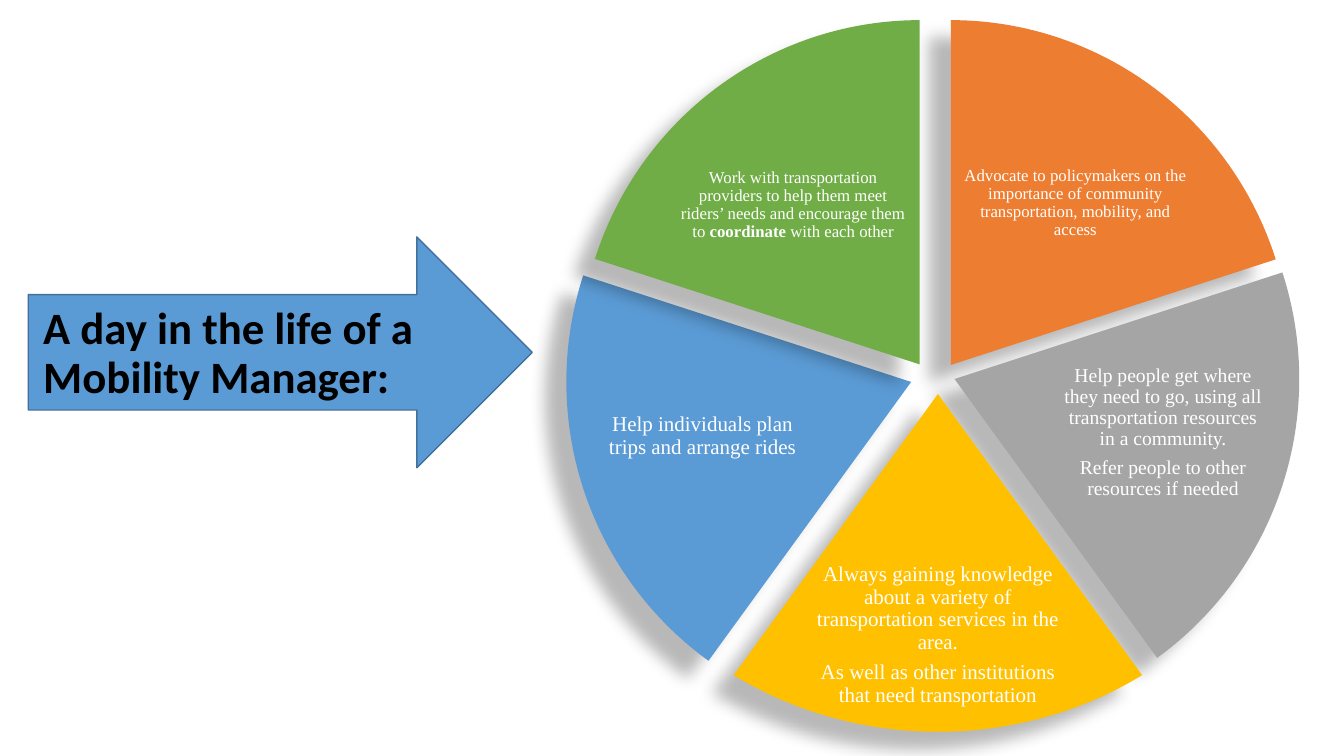
from lxml import etree
from pptx import Presentation
from pptx.dml.color import RGBColor
from pptx.enum.shapes import MSO_SHAPE
from pptx.enum.text import MSO_ANCHOR, PP_ALIGN
from pptx.oxml.ns import qn
from pptx.util import Pt

ARROW = MSO_SHAPE.RIGHT_ARROW
PIE = MSO_SHAPE.PIE
MIDDLE = MSO_ANCHOR.MIDDLE
LEFT = PP_ALIGN.LEFT
CENTER = PP_ALIGN.CENTER

THEME = {
    "blue": RGBColor.from_string("5B9BD5"),
    "outline": RGBColor.from_string("42719B"),
    "orange": RGBColor.from_string("ED7D31"),
    "gray": RGBColor.from_string("A5A5A5"),
    "gold": RGBColor.from_string("FFC000"),
    "green": RGBColor.from_string("70AD47"),
    "black": RGBColor.from_string("000000"),
    "white": RGBColor.from_string("FFFFFF"),
    "title_font": "Calibri",
    "slice_font": "Times New Roman",
    "title": 32,
    "small": 12,
    "medium": 14,
    "large": 15,
}

FULL_TURN = 216
SLICE_TURN = FULL_TURN / 5
FIRST_ANGLE = 162

deck = Presentation()
deck.slide_width, deck.slide_height = Pt(960), Pt(540)
page = deck.slides.add_slide(deck.slide_layouts[6])


def add_filled_shape(kind, bounds, color):
    shape = page.shapes.add_shape(kind, *map(Pt, bounds))
    shape.shadow.inherit = False
    shape.fill.solid()
    shape.fill.fore_color.rgb = THEME[color]
    return shape


def add_text(bounds, paragraphs, font, size, color, align, insets, gap=0):
    box = page.shapes.add_textbox(*map(Pt, bounds))
    frame = box.text_frame
    across, down = map(Pt, insets)
    frame_format = {
        "word_wrap": True, "vertical_anchor": MIDDLE,
        "margin_left": across, "margin_right": across,
        "margin_top": down, "margin_bottom": down,
    }
    for name, value in frame_format.items():
        setattr(frame, name, value)
    for index, spans in enumerate(paragraphs):
        para = frame.add_paragraph() if index else frame.paragraphs[0]
        para_format = {
            "alignment": align, "line_spacing": 0.9,
            "space_before": Pt(gap if index else 0),
        }
        for name, value in para_format.items():
            setattr(para, name, value)
        for text, bold in spans:
            span = para.add_run()
            span.text = text
            span_format = {"name": THEME[font], "size": Pt(THEME[size]), "bold": bold}
            for name, value in span_format.items():
                setattr(span.font, name, value)
            span.font.color.rgb = THEME[color]


arrow = add_filled_shape(ARROW, (20.2, 169.2, 360, 164.9), "blue")
arrow.line.color.rgb = THEME["outline"]
arrow.line.width = Pt(1)
add_text((23.8, 122.4, 309.6, 261.4),
         [[("A day in the life of a Mobility Manager:", True)]],
         "title_font", "title", "black", LEFT, (7.2, 3.6))

slices = [
    ("orange", (435.6, 14.4, 487.4, 492.5), (685.4, 87.8, 165.6, 114.5), "small", 0,
     [[("Advocate to policymakers on the importance of community "
        "transportation, mobility, and access", False)]]),
    ("gray", (435.6, 24.5, 492.5, 492.5), (757.4, 247, 146.9, 123.8), "medium", 4.9,
     [[("Help people get where they need to go, using all "
        "transportation resources in a community.", False)],
      [("Refer people to other resources if needed", False)]]),
    ("gold", (406.8, 40.3, 526.3, 482.4), (576, 401.8, 187.9, 103.7), "large", 5.2,
     [[("Always gaining knowledge about a variety of "
        "transportation services in the area.", False)],
      [("As well as other institutions that need transportation", False)]]),
    ("blue", (404.6, 26.6, 492.5, 492.5), (428.4, 249.8, 146.9, 123.8), "large", 0,
     [[("Help individuals plan trips and arrange rides", False)]]),
    ("green", (413.3, 14.4, 487.4, 491.8), (483.8, 89.3, 165.6, 114.5), "small", 0,
     [[("Work with transportation providers to help them meet "
        "riders’ needs and encourage them to ", False),
       ("coordinate", True), (" with each other", False)]]),
]

for index, (color, bounds, text_bounds, size, gap, paragraphs) in enumerate(slices):
    wedge = add_filled_shape(PIE, bounds, color)
    wedge.line.fill.background()
    start = FIRST_ANGLE + index * SLICE_TURN
    wedge.adjustments[0] = round(start % FULL_TURN, 1)
    wedge.adjustments[1] = round((start + SLICE_TURN) % FULL_TURN, 1)

    effects = wedge.element.spPr.find(qn("a:effectLst"))
    shadow = etree.SubElement(effects, qn("a:outerShdw"), {
        "blurRad": str(Pt(11.8)), "dist": str(Pt(19.7)), "dir": str(141 * 60000),
        "algn": "ctr", "rotWithShape": "0",
    })
    tint = etree.SubElement(shadow, qn("a:srgbClr"), val=str(THEME["black"]))
    etree.SubElement(tint, qn("a:alpha"), val="27000")

    add_text(text_bounds, paragraphs, "slice_font", size, "white", CENTER,
             (1.4, 1.4), gap)

deck.save("out.pptx")
